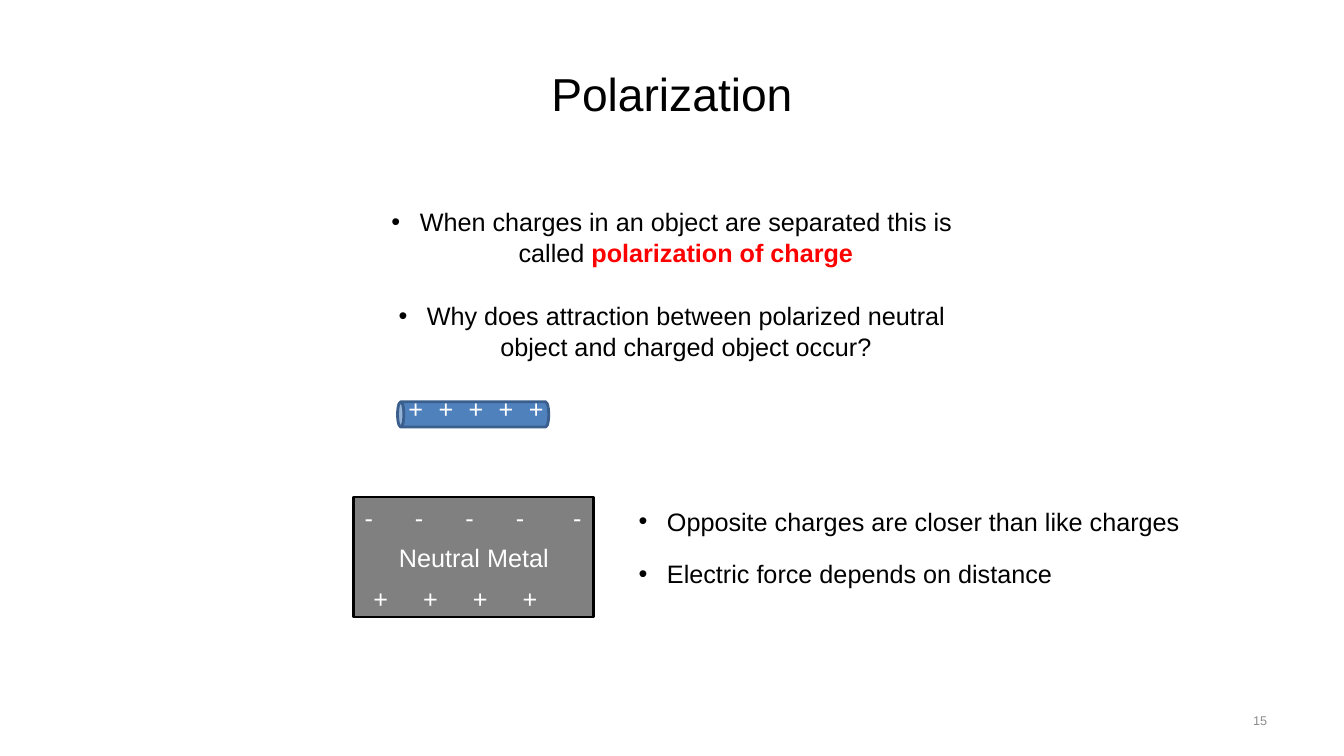
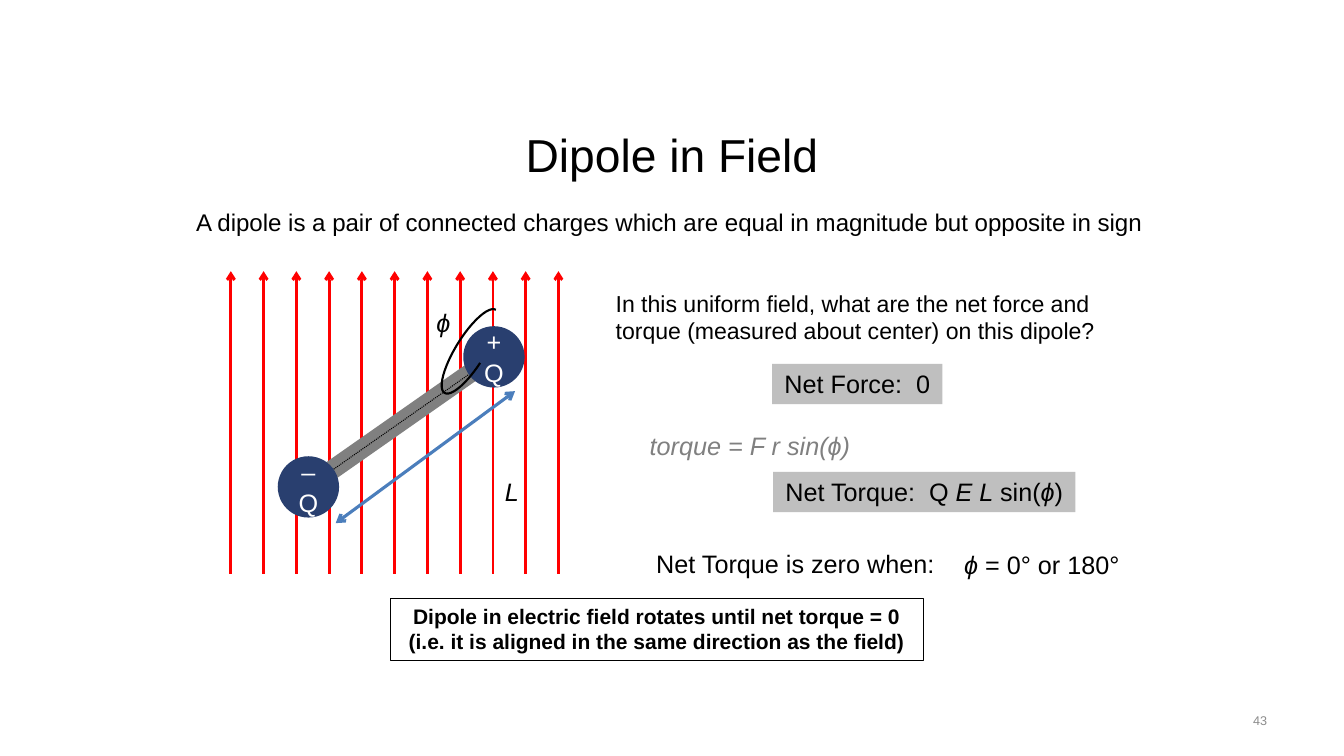
from dataclasses import dataclass

from pptx import Presentation
from pptx.dml.color import RGBColor
from pptx.enum.dml import MSO_LINE
from pptx.enum.shapes import MSO_CONNECTOR, MSO_SHAPE
from pptx.enum.text import MSO_ANCHOR, MSO_AUTO_SIZE, PP_ALIGN
from pptx.oxml.ns import qn
from pptx.util import Pt
from lxml.etree import SubElement


@dataclass(frozen=True)
class Theme:
    font: str = "Arial"
    title_size: float = 33
    text_size: float = 18
    intro_size: float = 17.2
    question_size: float = 16.5
    conclusion_size: float = 15
    number_size: float = 9
    black: str = "000000"
    white: str = "FFFFFF"
    red: str = "FF0000"
    gray: str = "808080"
    answer_fill: str = "BFBFBF"
    number_color: str = "8C8C8C"
    rod_fill: str = "4F81BD"
    rod_line: str = "3A5F8C"
    charge: str = "293F6F"
    length_line: str = "4B7EBC"
    bullet_indent: float = 20.2


@dataclass(frozen=True)
class Span:
    """A stretch of text; spacing widens the gap after each letter, in points."""
    text: str
    color: str = ""
    bold: bool = False
    italic: bool = False
    spacing: float = 0


THEME = Theme()
TWO_CONTENT, TITLE_ONLY = 3, 5


class SlideBuilder:
    def __init__(self, theme):
        self.theme = theme
        self.deck = Presentation()
        self.deck.slide_width, self.deck.slide_height = Pt(960), Pt(540)
        self.page = None

    def add_page(self, layout, title, title_place, number):
        self.page = self.deck.slides.add_slide(self.deck.slide_layouts[layout])
        heading = self.page.shapes.title
        self.place(heading, title_place)
        self.fill_text(heading.text_frame, [[Span(title)]],
                       self.theme.title_size, anchor=MSO_ANCHOR.MIDDLE)
        self.text((688.3, 500.4, 224, 28.8), [[Span(number)]],
                  size=self.theme.number_size, color=self.theme.number_color,
                  align=PP_ALIGN.RIGHT, anchor=MSO_ANCHOR.MIDDLE)

    def place(self, shape, place):
        shape.left, shape.top, shape.width, shape.height = map(Pt, place)

    def fill_text(self, frame, paragraphs, size=None, color=None,
                  align=PP_ALIGN.CENTER, anchor=MSO_ANCHOR.TOP):
        frame.word_wrap = True
        frame.auto_size = MSO_AUTO_SIZE.NONE
        frame.vertical_anchor = anchor
        for index, spans in enumerate(paragraphs):
            para = frame.paragraphs[0] if index == 0 else frame.add_paragraph()
            para.alignment = align
            para.space_before = Pt(0)
            for span in spans:
                run = para.add_run()
                run.text = span.text
                font = run.font
                font.name = self.theme.font
                font.size = Pt(size or self.theme.text_size)
                font.bold, font.italic = span.bold, span.italic
                font.color.rgb = RGBColor.from_string(
                    span.color or color or self.theme.black)
                if span.spacing:
                    run._r.get_or_add_rPr().set(
                        "spc", str(round(span.spacing * 100)))

    def bullets(self, placeholder, place, paragraphs, gap, align):
        body = self.page.placeholders[placeholder]
        self.place(body, place)
        self.fill_text(body.text_frame, paragraphs, align=align)
        for para in body.text_frame.paragraphs:
            para.space_after = Pt(gap)
            properties = para._p.get_or_add_pPr()
            properties.set("marL", str(int(Pt(self.theme.bullet_indent))))
            properties.set("indent", str(-int(Pt(self.theme.bullet_indent))))

    def text(self, place, paragraphs, **style):
        box = self.page.shapes.add_textbox(*map(Pt, place))
        self.fill_text(box.text_frame, paragraphs, **style)

    def shape(self, kind, place, fill=None, line=None, width=2, rotation=0,
              paragraphs=(), **style):
        shape = self.page.shapes.add_shape(kind, *map(Pt, place))
        shape.shadow.inherit = False
        shape.rotation = rotation
        if fill:
            shape.fill.solid()
            shape.fill.fore_color.rgb = RGBColor.from_string(fill)
        else:
            shape.fill.background()
        if line:
            shape.line.color.rgb = RGBColor.from_string(line)
            shape.line.width = Pt(width)
        else:
            shape.line.fill.background()
        self.fill_text(shape.text_frame, paragraphs, **style)
        return shape

    def line(self, start, end, color, width, dash=None, arrows=()):
        """Draw a line; arrows lists the ends, headEnd before tailEnd."""
        connector = self.page.shapes.add_connector(
            MSO_CONNECTOR.STRAIGHT, *map(Pt, (*start, *end)))
        connector.line.color.rgb = RGBColor.from_string(color)
        connector.line.width = Pt(width)
        if dash:
            connector.line.dash_style = dash
        properties = connector._element.spPr
        outline = properties.find(qn("a:ln"))
        for arrow in arrows:
            SubElement(outline, qn(f"a:{arrow}")).set("type", "arrow")
        SubElement(properties, qn("a:effectLst"))


def build_polarization(builder):
    theme = builder.theme
    builder.add_page(TWO_CONTENT, "Polarization", (48, 21.6, 864, 90), "15")
    builder.bullets(1, (252.7, 144, 454.3, 124), [
        [Span("When charges in an object are separated this is called "),
         Span("polarization of charge", theme.red, bold=True)],
        [Span("Why does attraction between polarized neutral object "
              "and charged object occur?")],
    ], gap=24, align=PP_ALIGN.CENTER)
    builder.bullets(2, (449, 357.8, 420, 70), [
        [Span("Opposite charges are closer than like charges")],
        [Span("Electric force depends on distance")],
    ], gap=16, align=PP_ALIGN.LEFT)

    builder.shape(MSO_SHAPE.RECTANGLE, (252.7, 355, 171.4, 85.7),
                  theme.gray, theme.black, paragraphs=[[Span("Neutral Metal")]],
                  color=theme.white, anchor=MSO_ANCHOR.MIDDLE)
    builder.shape(MSO_SHAPE.CAN, (329, 242, 18, 108),
                  theme.rod_fill, theme.rod_line, rotation=270)
    charge_rows = [
        (284.7, 277.6, [Span("++++", spacing=11), Span("+")]),
        (253.4, 355, [Span("- - - ", spacing=12.5),
                      Span("- ", spacing=15), Span("-")]),
        (259.7, 413.3, [Span("+ + + ", spacing=10), Span("+")]),
    ]
    for left, top, spans in charge_rows:
        builder.text((left, top, 180, 28.8), [spans],
                     color=theme.white, align=PP_ALIGN.LEFT)


def build_dipole(builder):
    theme = builder.theme
    phi = Span("ϕ", italic=True)
    wide_space = Span(" ", spacing=5)
    builder.add_page(TITLE_ONLY, "Dipole in Field", (237, 76.3, 486, 67.7), "43")
    builder.text((128.9, 144.7, 697.7, 28), [[Span(
        "A dipole is a pair of connected charges which are equal in magnitude "
        "but opposite in sign")]], size=theme.intro_size)
    builder.text((432.7, 203, 376.6, 47.5), [[Span(
        "In this uniform field, what are the net force and torque "
        "(measured about center) on this dipole?")]],
        size=theme.question_size, align=PP_ALIGN.LEFT)

    for index in range(11):
        x = 164.9 + 23.4 * index
        builder.line((x, 409.7), (x, 193.7), theme.red, 2, arrows=["tailEnd"])

    builder.shape(MSO_SHAPE.RECTANGLE, (205.2, 294.5, 162, 13.7),
                  theme.gray, rotation=325)
    builder.line((220.3, 347.8), (352.8, 254.9), theme.black, 0.75,
                 dash=MSO_LINE.ROUND_DOT)
    for left, top, label in [(199.4, 326.9, "–Q"), (331.9, 234, "+Q")]:
        builder.shape(MSO_SHAPE.OVAL, (left, top, 41.8, 41.8),
                      theme.charge, theme.charge, paragraphs=[[Span(label)]],
                      color=theme.white, anchor=MSO_ANCHOR.MIDDLE)
    angle = builder.shape(MSO_SHAPE.ARC, (301, 240.5, 69.8, 20.9),
                          line=theme.black, width=1.5, rotation=301.7)
    angle.adjustments[0], angle.adjustments[1] = 64.48, 0
    builder.line((239.8, 373.7), (367.9, 279.4), theme.length_line, 2.25,
                 arrows=["headEnd", "tailEnd"])

    labels = [
        ((304.6, 216, 22.3, 28.8), [phi]),
        ((353.5, 337, 22.3, 28.8), [Span("L", italic=True)]),
        ((450, 303.8, 171.4, 28.8),
         [Span("torque = F r sin(ϕ)", theme.gray, italic=True)]),
        ((455.8, 388.1, 224.6, 28.8), [Span("Net Torque is zero when:")]),
        ((679, 388.8, 130.3, 28.8), [phi, Span(" = 0° or 180°")]),
    ]
    for place, spans in labels:
        builder.text(place, [spans])

    answers = [
        ((551.5, 259.9, 121.7, 28.8), [Span("Net Force:"), wide_space, Span("0")]),
        ((552.2, 337, 216, 28.8),
         [Span("Net Torque:"), wide_space, Span("Q "), Span("E L ", italic=True),
          Span("sin("), phi, Span(")")]),
    ]
    for place, spans in answers:
        builder.shape(MSO_SHAPE.RECTANGLE, place, theme.answer_fill,
                      paragraphs=[spans])
    builder.shape(MSO_SHAPE.RECTANGLE, (278.6, 427.7, 380.9, 43.9),
                  line=theme.black, width=0.75, size=theme.conclusion_size,
                  paragraphs=[
        [Span("Dipole in electric field rotates until net torque = 0", bold=True)],
        [Span("(i.e. it is aligned in the same direction as the field)", bold=True)],
    ])


def main():
    builder = SlideBuilder(THEME)
    build_polarization(builder)
    build_dipole(builder)
    builder.deck.save("out.pptx")


if __name__ == "__main__":
    main()
